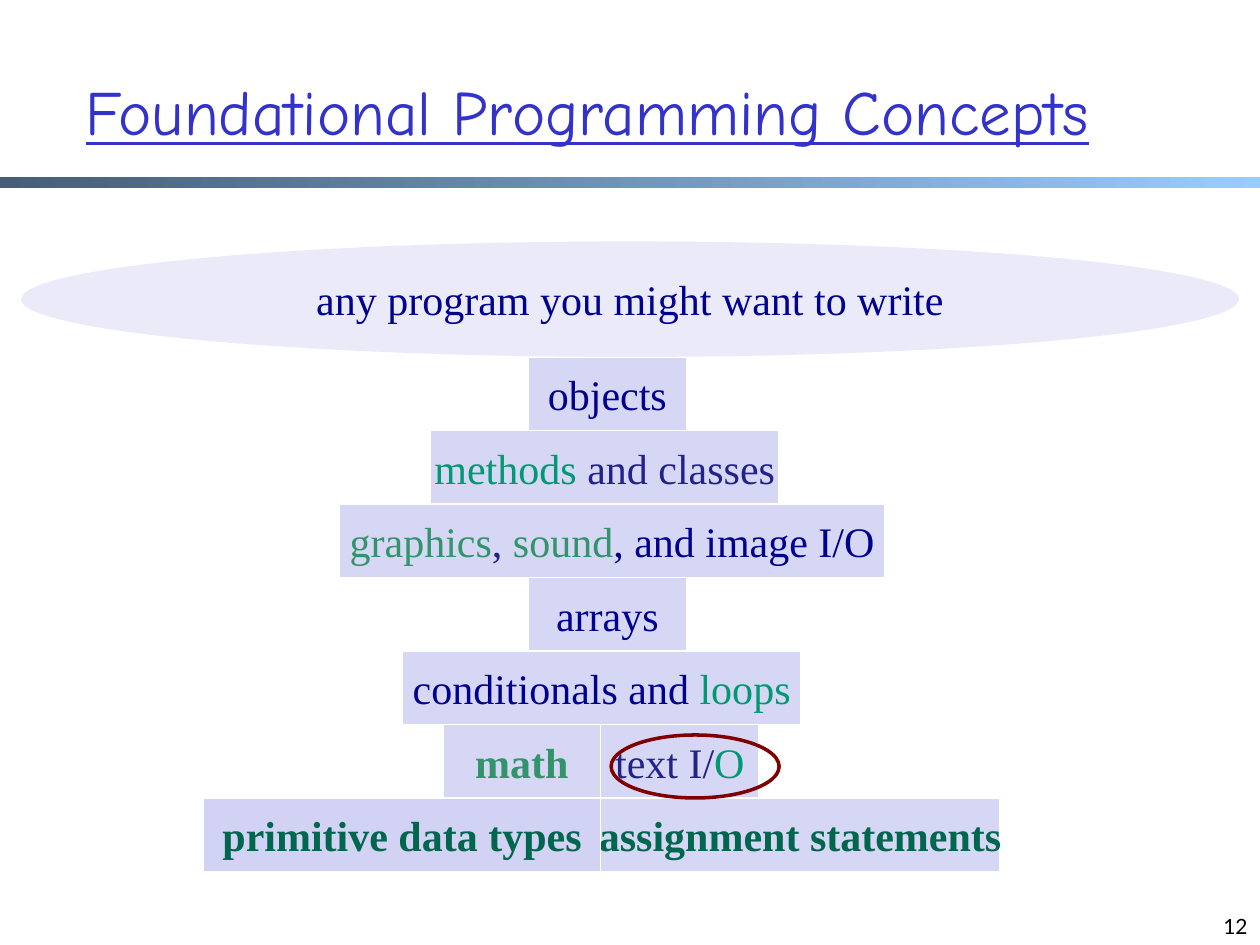
"""Build the slide that stacks programming concepts into a pyramid."""
from lxml import etree
from pptx import Presentation
from pptx import util as u
from pptx.dml.color import RGBColor
from pptx.enum import shapes, text
from pptx.oxml import ns

THEME = {
    "title": "3333CC", "number": "000000", "navy": "000090", "indigo": "22228B",
    "teal": "009973", "green": "32946A", "forest": "00664D",
    "block": "D6D6F5", "base": "D2D2F4", "edge": "FFFFFF", "ring": "800000",
    "bar_start": "475E76", "bar_end": "99CCFF",
    "title_font": "Comic Neue", "body_font": "Times New Roman", "number_font": "Lato",
    "title_size": 36, "body_size": 24, "number_size": 12,
}
PX = 914400 // 120
ROW_TOP, ROW_HEIGHT = 340, 70


def add_shape(kind, left, top, width, height):
    shape = slide.shapes.add_shape(kind, left * PX, top * PX, width * PX, height * PX)
    shape.shadow.inherit = False
    shape.line.fill.background()
    return shape


def write(shape, runs, role="body", align=text.PP_ALIGN.CENTER,
          anchor=text.MSO_ANCHOR.MIDDLE, wrap=False, bold=False):
    frame = shape.text_frame
    frame.word_wrap = wrap
    frame.vertical_anchor = anchor
    paragraph = frame.paragraphs[0]
    paragraph.alignment = align
    for words, color in runs:
        run = paragraph.add_run()
        run.text = words
        run.font.name = THEME[role + "_font"]
        run.font.size = u.Pt(THEME[role + "_size"])
        run.font.color.rgb = RGBColor.from_string(THEME[color])
        run.font.bold = bold
        run.font.underline = role == "title"


deck = Presentation()
deck.slide_width, deck.slide_height = 1200 * PX, 900 * PX
slide = deck.slides.add_slide(deck.slide_layouts[6])

bar = add_shape(shapes.MSO_SHAPE.RECTANGLE, 0, 169, 1200, 10)
bar.fill.gradient()
bar.fill.gradient_angle = 0
for stop, color in zip(bar.fill.gradient_stops, ("bar_start", "bar_end")):
    stop.color.rgb = RGBColor.from_string(THEME[color])

title = slide.shapes.add_textbox(70 * PX, 30 * PX, 1070 * PX, 150 * PX)
write(title, [("Foundational Programming Concepts", "title")], "title",
      text.PP_ALIGN.LEFT, wrap=True)

number = slide.shapes.add_textbox(920 * PX, 840 * PX, 280 * PX, 60 * PX)
write(number, [("12", "number")], "number", text.PP_ALIGN.RIGHT,
      text.MSO_ANCHOR.BOTTOM, wrap=True)

concepts = [
    (0, 503, 151, "block", False, [("objects", "navy")]),
    (1, 410, 332, "block", False, [("methods ", "teal"), ("and classes", "indigo")]),
    (2, 323, 520, "block", False, [("graphics", "green"), (", ", "indigo"),
                                   ("sound", "green"), (", and image I/O", "navy")]),
    (3, 503, 151, "block", False, [("arrays", "navy")]),
    (4, 383, 380, "block", False, [("conditionals and ", "navy"), ("loops", "teal")]),
    (5, 422, 150, "block", True, [("math", "green")]),
    (5, 572, 151, "block", False, [("text I/", "indigo"), ("O", "teal")]),
    (6, 572, 380, "block", True, [("assignment statements", "forest")]),
    (6, 194, 378, "base", True, [("primitive data types", "forest")]),
]
for row, left, width, fill, bold, runs in concepts:
    block = add_shape(shapes.MSO_SHAPE.RECTANGLE, left, ROW_TOP + row * ROW_HEIGHT,
                      width, ROW_HEIGHT)
    block.fill.solid()
    block.fill.fore_color.rgb = RGBColor.from_string(THEME[fill])
    block.line.color.rgb = RGBColor.from_string(THEME["edge"])
    block.line.width = u.Pt(0.75)
    write(block, runs, bold=bold)

program = add_shape(shapes.MSO_SHAPE.OVAL, 20, 230, 1160, 110)
program.fill.solid()
program.fill.fore_color.rgb = RGBColor.from_string(THEME["block"])
tint = program.fill._xPr.find(ns.qn("a:solidFill")).find(ns.qn("a:srgbClr"))
etree.SubElement(tint, ns.qn("a:alpha"), val="50000")
write(program, [("any program you might want to write", "navy")])

ring = add_shape(shapes.MSO_SHAPE.OVAL, 582, 700, 160, 60)
ring.fill.background()
ring.line.color.rgb = RGBColor.from_string(THEME["ring"])
ring.line.width = u.Pt(2)

deck.save("out.pptx")
